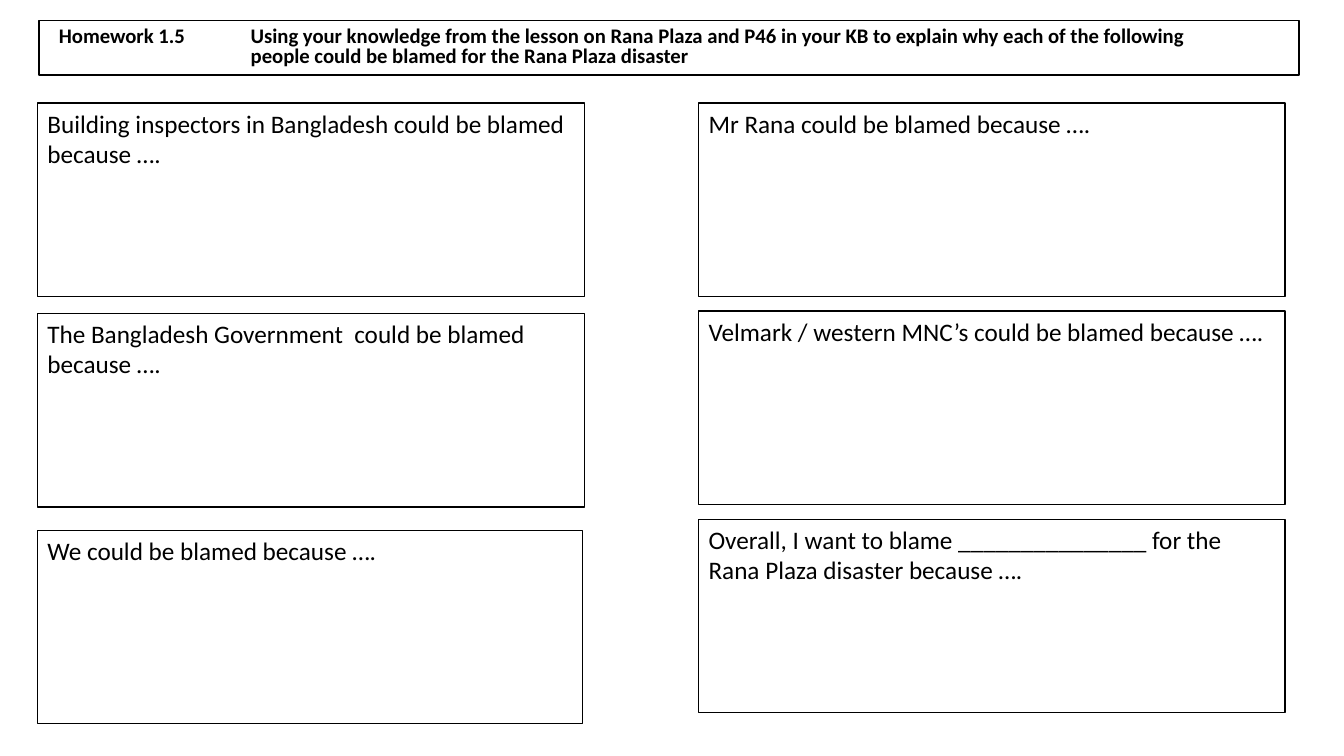
import pptx
import pptx.dml.color
import pptx.enum.shapes
import pptx.enum.text
import pptx.util

Pt = pptx.util.Pt
ANCHOR = pptx.enum.text.MSO_ANCHOR
ANSWER_HEIGHT = 138.25
LEFT_COLUMN = [
    (73.5, 391, "Building inspectors in Bangladesh could be blamed because …."),
    (224, 391, "The Bangladesh Government  could be blamed because …."),
    (378.75, 389.5, "We could be blamed because …."),
]
RIGHT_COLUMN = [
    "Mr Rana could be blamed because ….",
    "Velmark / western MNC’s could be blamed because ….",
    "Overall, I want to blame _______________ for the Rana Plaza disaster because ….",
]
TASK = [
    "Homework 1.5\tUsing your knowledge from the lesson on Rana Plaza and P46 "
    "in your KB to explain why each of the following",
    "people could be blamed for the Rana Plaza disaster",
]


def color(hex_value):
    """Return the colour for a hex string."""
    return pptx.dml.color.RGBColor.from_string(hex_value)


def add_box(slide, left, top, width, height, lines, size, bold=False, anchor=ANCHOR.TOP):
    """Add a white, black-edged box of text and return its paragraphs."""
    box = slide.shapes.add_shape(
        pptx.enum.shapes.MSO_SHAPE.RECTANGLE, Pt(left), Pt(top), Pt(width), Pt(height))
    box.shadow.inherit = False
    box.fill.solid()
    box.fill.fore_color.rgb = color("FFFFFF")
    box.line.color.rgb = color("000000")
    box.line.width = Pt(1)
    frame = box.text_frame
    frame.word_wrap = True
    frame.vertical_anchor = anchor
    frame.text = "\n".join(lines)
    for paragraph in frame.paragraphs:
        paragraph.alignment = pptx.enum.text.PP_ALIGN.LEFT
        for run in paragraph.runs:
            run.font.name = "Calibri"
            run.font.size = Pt(size)
            run.font.bold = bold
            run.font.color.rgb = color("000000")
    return frame.paragraphs


def add_task(slide):
    """Add the homework heading with its instruction set on a hanging indent."""
    paragraphs = add_box(slide, 28, 14.5, 900, 39, TASK, 14.8, True, ANCHOR.MIDDLE)
    for paragraph, first_line in zip(paragraphs, (-137, 0)):
        paragraph.line_spacing = 0.8
        properties = paragraph._p.get_or_add_pPr()
        properties.set("marL", str(Pt(144)))
        properties.set("indent", str(Pt(first_line)))


def main():
    """Build the homework slide."""
    deck = pptx.Presentation()
    deck.slide_width, deck.slide_height = Pt(960), Pt(540)
    slide = deck.slides.add_slide(deck.slide_layouts[6])
    add_task(slide)
    for top, width, prompt in LEFT_COLUMN:
        add_box(slide, 26.75, top, width, ANSWER_HEIGHT, [prompt], 18)
    for row, prompt in enumerate(RIGHT_COLUMN):
        add_box(slide, 499, 73.5 + row * 148.7, 419, ANSWER_HEIGHT, [prompt], 18)
    deck.save("out.pptx")


if __name__ == "__main__":
    main()
